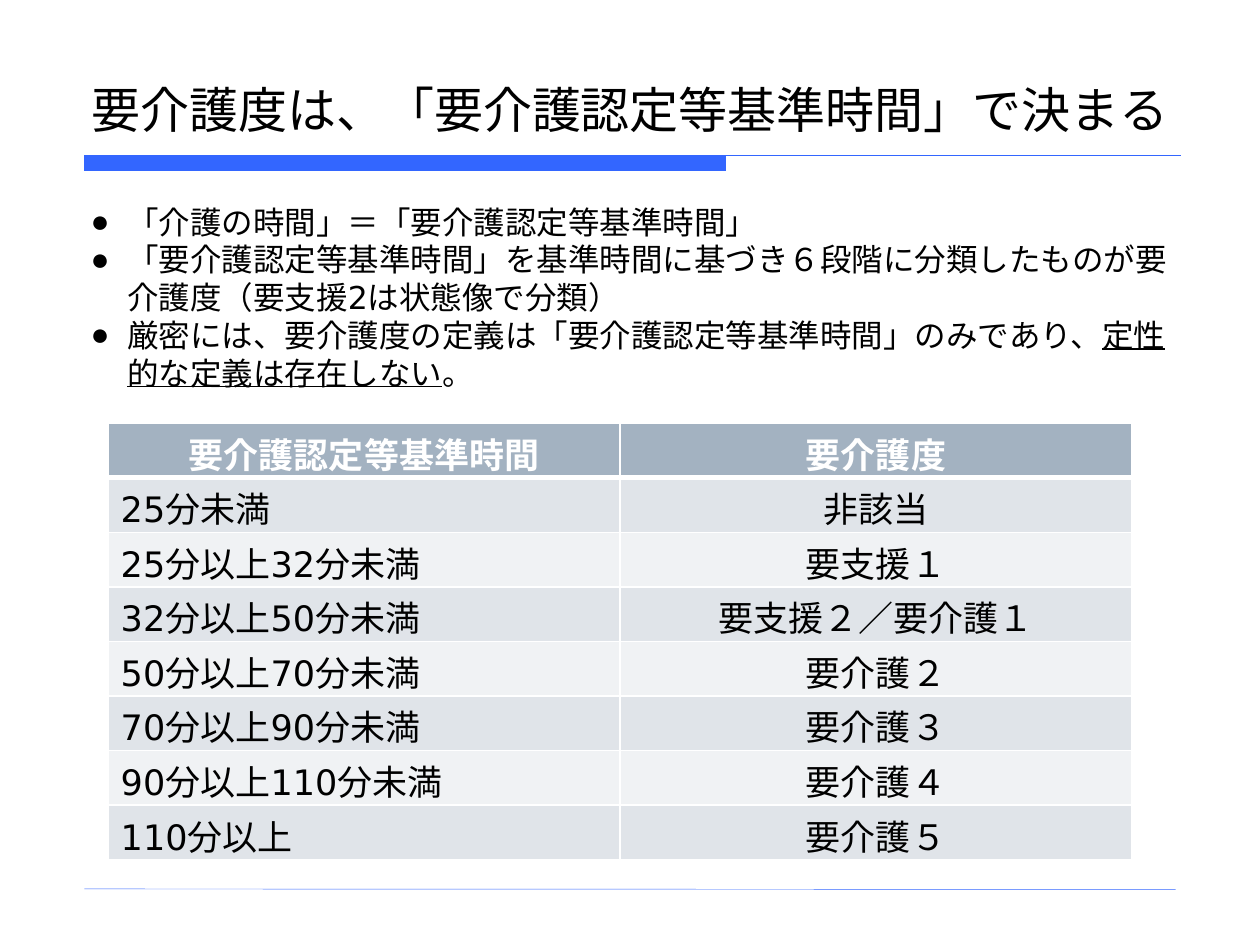
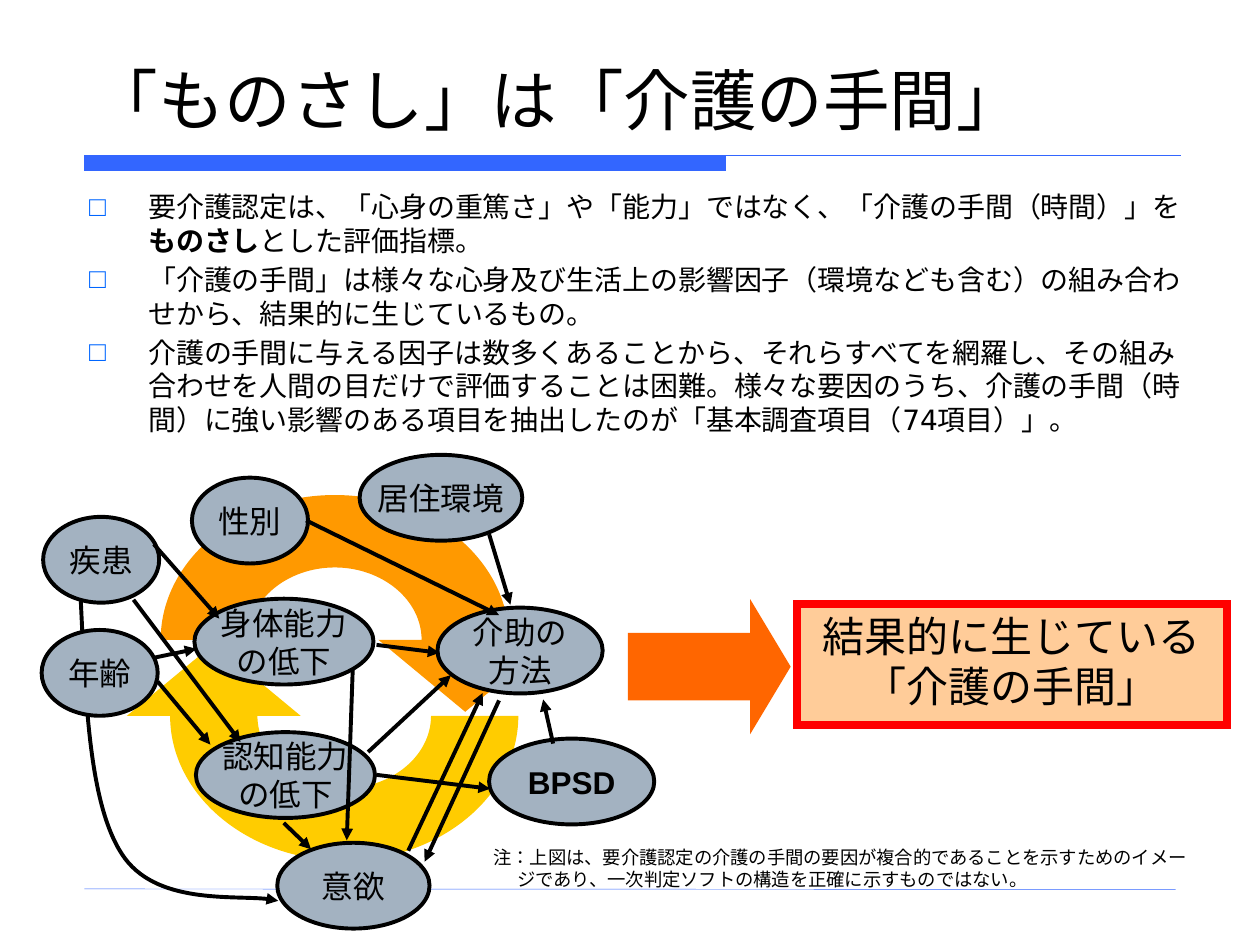
from lxml.etree import SubElement
from pptx import Presentation
from pptx.dml.color import RGBColor
from pptx.enum.lang import MSO_LANGUAGE_ID
from pptx.enum.shapes import MSO_CONNECTOR, MSO_SHAPE
from pptx.enum.text import MSO_ANCHOR, PP_ALIGN
from pptx.oxml.ns import qn
from pptx.util import Cm, Pt

SANS, ARIAL = "DejaVu Sans", "Arial"
BLACK, WHITE, BLUE, GREY = "000000", "FFFFFF", "3366FF", "A3B2C1"
BANDS = ("E0E4E9", "F0F2F4")

# Each paragraph is a string or a list of (text, style) runs.
TIME_TITLE = "要介護度は、「要介護認定等基準時間」で決まる"
TIME_POINTS = [
    "「介護の時間」＝「要介護認定等基準時間」",
    "「要介護認定等基準時間」を基準時間に基づき６段階に分類したものが要介護度（要支援2は状態像で分類）",
    [("厳密には、要介護度の定義は「要介護認定等基準時間」のみであり、", ""),
     ("定性的な定義は存在しない", "underline"), ("。", "")],
]
TIME_TABLE = [
    ("要介護認定等基準時間", "要介護度"),
    ("25分未満", "非該当"),
    ("25分以上32分未満", "要支援１"),
    ("32分以上50分未満", "要支援２／要介護１"),
    ("50分以上70分未満", "要介護２"),
    ("70分以上90分未満", "要介護３"),
    ("90分以上110分未満", "要介護４"),
    ("110分以上", "要介護５"),
]

EFFORT_TITLE = "「ものさし」は「介護の手間」"
EFFORT_POINTS = [
    [("要介護認定は、「心身の重篤さ」や「能力」ではなく、「介護の手間（時間）」を", ""),
     ("ものさし", "bold"), ("とした評価指標。", "")],
    "「介護の手間」は様々な心身及び生活上の影響因子（環境なども含む）の組み合わせから、結果的に生じているもの。",
    "介護の手間に与える因子は数多くあることから、それらすべてを網羅し、その組み合わせを人間の目だけで評価することは困難。"
    "様々な要因のうち、介護の手間（時間）に強い影響のある項目を抽出したのが「基本調査項目（74項目）」。",
]
RESULT = "結果的に生じている\n「介護の手間」"
NOTE = "注：上図は、要介護認定の介護の手間の要因が複合的であることを示すためのイメージであり、一次判定ソフトの構造を正確に示すものではない。"

FACTOR_HEIGHT = 1.73
FACTORS = [  # text, left, top, width
    ("介助の\n方法", 8.82, 12.25, 3.33),
    ("身体能力\nの低下", 3.92, 12.07, 3.61),
    ("認知能力\nの低下", 3.95, 14.76, 3.61),
    ("BPSD", 9.86, 14.89, 3.33),
    ("居住環境", 7.25, 9.17, 3.28),
    ("意欲", 5.59, 16.99, 3.07),
    ("性別", 3.87, 9.63, 2.34),
    ("疾患", 0.87, 10.42, 2.34),
    ("年齢", 0.84, 12.7, 2.34),
]
INFLUENCES = [  # start x, start y, end x, end y
    (3.1, 13.26, 3.96, 13.08),
    (3.18, 13.74, 4.24, 15.01),
    (5.72, 16.59, 6.27, 17.12),
    (6.17, 10.49, 10.06, 12.4),
    (7.42, 15.16, 9.09, 13.61),
    (8.23, 17.15, 9.73, 13.97),
    (7.11, 13.51, 6.99, 16.94),
    (9.86, 10.77, 10.29, 12.19),
    (7.59, 15.62, 9.88, 15.9),
    (11.15, 14.99, 10.95, 14.1),
    (10.06, 14.12, 8.56, 17.37),
    (3.1, 10.97, 4.42, 12.47),
    (2.69, 12.09, 4.85, 14.96),
    (7.59, 13, 8.86, 13.16),
]
DISEASE_TO_WILL = [  # start, then two Bezier segments of three points
    (1.63, 12.12), (1.73, 14.17), (1.8, 16.21), (2.46, 17.22),
    (3.12, 18.24), (5.08, 18.01), (5.61, 18.16),
]
CYCLE = [((6.75, 12.9), 1, "FF9900"), ((6.94, 14.43), -1, "FFCC00")]


def rgb(color):
    return RGBColor.from_string(color)


def write(frame, paragraphs, size, font=SANS, color=BLACK, bold=False, align=PP_ALIGN.LEFT,
          anchor=None, wrap=True, before=0, margin=0, indent=0, bullet=None,
          bullet_color=BLACK):
    """Fill a text frame; margin and indent are in centimetres."""
    if anchor is not None:
        frame.vertical_anchor = anchor
    frame.word_wrap = wrap
    for index, content in enumerate(paragraphs):
        paragraph = frame.paragraphs[0] if index == 0 else frame.add_paragraph()
        paragraph.alignment = align
        paragraph.space_before = Pt(before)
        properties = paragraph._p.get_or_add_pPr()
        properties.set("marL", str(Cm(margin)))
        properties.set("indent", str(Cm(indent)))
        if bullet:
            color_node = SubElement(properties, qn("a:buClr"))
            SubElement(color_node, qn("a:srgbClr"), val=bullet_color)
            SubElement(properties, qn("a:buFont"), typeface=ARIAL)
            SubElement(properties, qn("a:buChar"), char=bullet)
        runs = [(content, "")] if isinstance(content, str) else content
        for text, style in runs:
            for line_number, line in enumerate(text.split("\n")):
                if line_number:
                    paragraph.add_line_break()
                run = paragraph.add_run()
                run.text = line
                run.font.size = Pt(size)
                run.font.name = font
                run.font.bold = bold or style == "bold"
                run.font.underline = style == "underline"
                run.font.color.rgb = rgb(color)
                run.font.language_id = MSO_LANGUAGE_ID.JAPANESE
                latin = run._r.rPr.find(qn("a:latin"))
                latin.addnext(latin.makeelement(qn("a:ea"), {"typeface": SANS}))


def add_text(slide, place, paragraphs, **text_format):
    box = slide.shapes.add_textbox(*map(Cm, place))
    write(box.text_frame, paragraphs, **text_format)
    return box


def paint(shape, fill=None, line=None, width=0):
    shape.shadow.inherit = False
    if fill:
        shape.fill.solid()
        shape.fill.fore_color.rgb = rgb(fill)
    else:
        shape.fill.background()
    if line:
        shape.line.color.rgb = rgb(line)
        shape.line.width = Pt(width)
        SubElement(shape.element.spPr.find(qn("a:ln")), qn("a:miter"), lim="800000")
    else:
        shape.line.fill.background()


def add_shape(slide, kind, place, **look):
    shape = slide.shapes.add_shape(kind, *map(Cm, place))
    paint(shape, **look)
    return shape


def add_arrowhead(shape):
    outline = shape.element.spPr.find(qn("a:ln"))
    SubElement(outline, qn("a:tailEnd"), type="triangle")


def add_line(slide, ends, color, width):
    line = slide.shapes.add_connector(MSO_CONNECTOR.STRAIGHT, *map(Cm, ends))
    line.line.color.rgb = rgb(color)
    line.line.width = Pt(width)
    SubElement(line.element.spPr, qn("a:effectLst"))
    return line


def add_curved_outline(slide, points, curve_starts, close, **look):
    """Draw points as a freeform; each curve start turns three segments into one Bezier."""
    points = [(Cm(x), Cm(y)) for x, y in points]
    builder = slide.shapes.build_freeform(*points[0])
    builder.add_line_segments(points[1:], close=close)
    shape = builder.convert_to_shape()
    segments = list(shape.element.iter(qn("a:lnTo")))
    for start in curve_starts:
        curve = segments[start].makeelement(qn("a:cubicBezTo"), {})
        segments[start].addprevious(curve)
        for segment in segments[start:start + 3]:
            curve.append(segment[0])
            segment.getparent().remove(segment)
    paint(shape, **look)
    return shape


def add_half_ring_arrow(slide, center, direction, color):
    """Draw a half ring ending in an arrowhead; direction -1 turns it upside down."""
    def quarter_pair(radius_x, radius_y):
        bend_x, bend_y = 0.55 * radius_x, 0.55 * radius_y
        return [(radius_x, 0), (radius_x, -bend_y), (bend_x, -radius_y), (0, -radius_y),
                (-bend_x, -radius_y), (-radius_x, -bend_y), (-radius_x, 0)]

    points = (quarter_pair(1.75, 1.46) + quarter_pair(3.51, 2.92)[::-1]
              + [(4.38, 0), (2.63, 1.45), (0.88, 0)])
    points = [(center[0] + direction * x, center[1] + direction * y) for x, y in points]
    add_curved_outline(slide, points, (0, 3, 7, 10), True, fill=color)


def add_band(slide):
    """Draw the thick half band and the thin full-width rule as one outline."""
    left, middle, right, top, bottom = map(Cm, (1.7, 14.63, 23.8, 3.13, 3.43))
    builder = slide.shapes.build_freeform(left, top)
    builder.add_line_segments([(middle, top), (middle, bottom), (left, bottom)], close=True)
    builder.move_to(left, top)
    builder.add_line_segments([(right, top)], close=False)
    paint(builder.convert_to_shape(), fill=BLUE, line=BLUE, width=0.75)


def add_slide(presentation, title, title_size):
    """Add a slide with the shared title, blue band and bottom line."""
    slide = presentation.slides.add_slide(presentation.slide_layouts[6])
    add_band(slide)
    add_line(slide, (1.7, 17.92, 23.7, 17.93), BLUE, 0.25)
    box = add_text(slide, (1.6, 0.84, 22.22, 2.08), [title], size=title_size,
                   anchor=MSO_ANCHOR.BOTTOM)
    box.text_frame.margin_right = 0
    return slide


def add_border(cell, side, width):
    border = cell._tc.get_or_add_tcPr().makeelement(qn(f"a:{side}"), {"w": str(Pt(width))})
    fill = SubElement(border, qn("a:solidFill"))
    SubElement(fill, qn("a:srgbClr"), val=WHITE)
    return border


def set_borders(cell, top, bottom):
    borders = [add_border(cell, side, width) for side, width in
               (("lnL", 1), ("lnR", 1), ("lnT", top), ("lnB", bottom))]
    for position, border in enumerate(borders):
        cell._tc.tcPr.insert(position, border)


def build_time_slide(presentation):
    slide = add_slide(presentation, TIME_TITLE, 28)
    add_text(slide, (1.58, 3.96, 22.63, 4.11), TIME_POINTS, size=18,
             margin=0.74, indent=-0.74, bullet="●")
    place = (2.18, 8.53, 20.64, 1.1 * len(TIME_TABLE))
    table = slide.shapes.add_table(len(TIME_TABLE), 2, *map(Cm, place)).table
    for row, texts in enumerate(TIME_TABLE):
        header = row == 0
        for column, text in enumerate(texts):
            cell = table.cell(row, column)
            cell.fill.solid()
            cell.fill.fore_color.rgb = rgb(GREY if header else BANDS[(row - 1) % 2])
            cell.margin_top, cell.margin_bottom = Cm(0.25), 0
            set_borders(cell, 3 if row == 1 else 1, 3 if header else 1)
            centered = header or column == 1
            write(cell.text_frame, [text], size=20, bold=header,
                  color=WHITE if header else BLACK,
                  align=PP_ALIGN.CENTER if centered else PP_ALIGN.LEFT)


def build_effort_slide(presentation):
    slide = add_slide(presentation, EFFORT_TITLE, 38)
    for center, direction, color in CYCLE:
        add_half_ring_arrow(slide, center, direction, color)
    add_arrowhead(add_curved_outline(slide, DISEASE_TO_WILL, (0, 3), False,
                                     line=BLACK, width=2.25))
    for text, left, top, width in FACTORS:
        oval = add_shape(slide, MSO_SHAPE.OVAL, (left, top, width, FACTOR_HEIGHT),
                         fill=GREY, line=BLACK, width=2.25)
        write(oval.text_frame, [text], size=18, font=ARIAL, bold=text == "BPSD",
              align=PP_ALIGN.CENTER, anchor=MSO_ANCHOR.MIDDLE, wrap=False)
    for ends in INFLUENCES:
        add_arrowhead(add_line(slide, ends, BLACK, 2.25))
    arrow = add_shape(slide, MSO_SHAPE.RIGHT_ARROW, (12.66, 12.08, 3.28, 2.72), fill="FF6600")
    arrow.adjustments[1] = 0.3
    result = add_shape(slide, MSO_SHAPE.RECTANGLE, (16.07, 12.18, 8.66, 2.44),
                       fill="FFCC99", line="FF0000", width=4.5)
    write(result.text_frame, [RESULT], size=24, font=ARIAL, align=PP_ALIGN.CENTER,
          anchor=MSO_ANCHOR.TOP)
    add_text(slide, (1.55, 3.7, 22.86, 6.43), EFFORT_POINTS, size=16, before=3.2,
             margin=1.19, indent=-1.3, bullet="□", bullet_color="0066FF")
    add_text(slide, (9.7, 16.93, 14.6, 1.19), [NOTE], size=10.5, margin=0.48, indent=-0.48)


def main():
    presentation = Presentation()
    presentation.slide_width = Cm(25.4)
    presentation.slide_height = Cm(19.05)
    build_time_slide(presentation)
    build_effort_slide(presentation)
    presentation.save("out.pptx")


if __name__ == "__main__":
    main()
